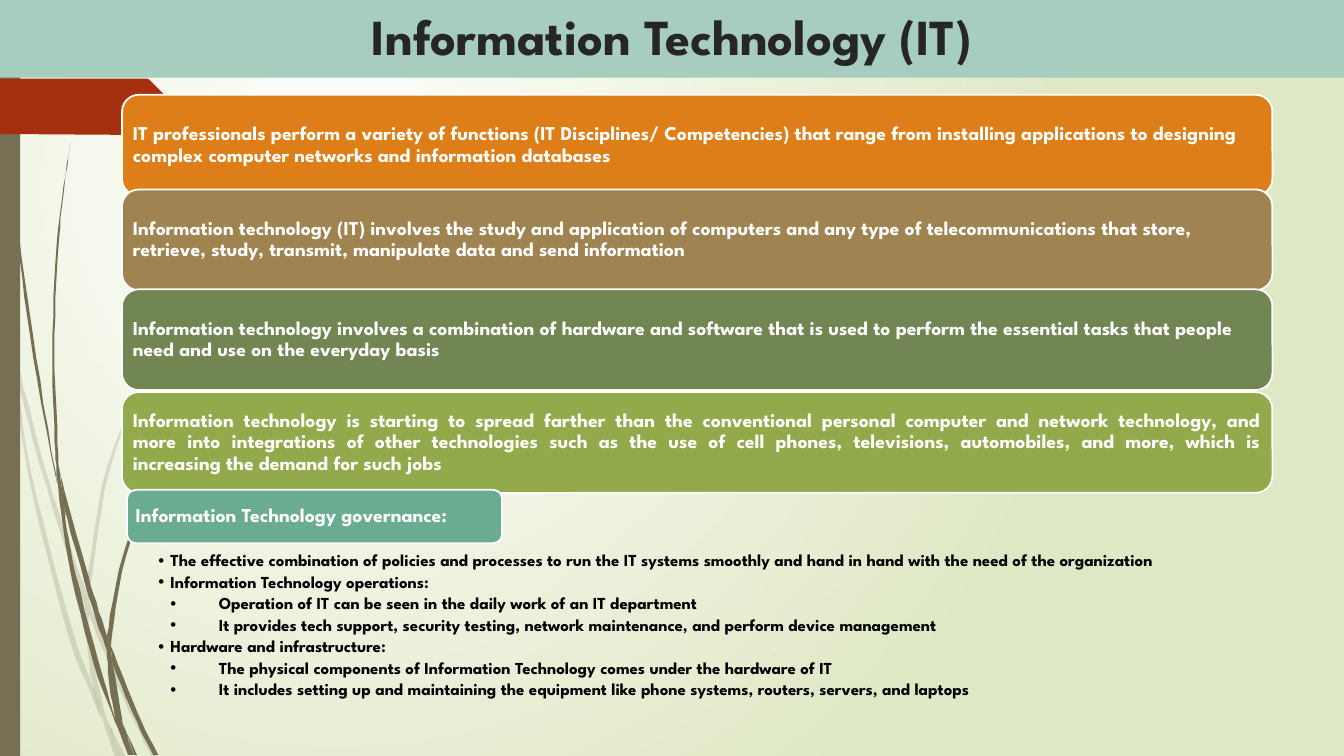
from pptx import Presentation
from pptx.dml.color import RGBColor
from pptx.enum.shapes import MSO_SHAPE
from pptx.enum.text import MSO_ANCHOR, PP_ALIGN
from pptx.oxml import parse_xml
from pptx.oxml.ns import nsdecls, qn
from pptx.util import Pt

PX = 9144
FONT = "League Spartan"
COLORS = {
    "white": "FFFFFF", "meadow": "DFE8C4", "stem": "766F54", "ribbon": "A53010",
    "banner": "A6CDBD", "title": "262626", "orange": "DE7E18", "brown": "9F8351",
    "moss": "728653", "lime": "92AA4C", "teal": "6AAC91", "black": "000000",
}
BARS = [
    (94, "orange", "IT professionals perform a variety of functions (IT Disciplines/ Competencies) that range "
     "from installing applications to designing complex computer networks and information databases"),
    (188, "brown", "Information technology (IT) involves the study and application of computers and any type of "
     "telecommunications that store, retrieve, study, transmit, manipulate data and send information"),
    (287, "moss", "Information technology involves a combination of hardware and software that is used to "
     "perform the essential tasks that people need and use on the everyday basis"),
    (389, "lime", "Information technology is starting to spread farther than the conventional personal computer "
     "and network technology, and\vmore into integrations of other technologies such as the use of cell phones, "
     "televisions, automobiles, and more, which is\vincreasing the demand for such jobs"),
]
BULLETS = [
    (1, "The effective combination of policies and processes to run the IT systems smoothly and hand in hand "
     "with the need of the organization"),
    (1, "Information Technology operations:"),
    (2, "Operation of IT can be seen in the daily work of an IT department"),
    (2, "It provides tech support, security testing, network maintenance, and perform device management"),
    (1, "Hardware and infrastructure:"),
    (2, "The physical components of Information Technology comes under the hardware of IT"),
    (2, "It includes setting up and maintaining the equipment like phone systems, routers, servers, and laptops"),
]
LEVEL_INDENTS = {1: (12, -12), 2: (60, -48)}
PALE_BLADES = [
    ([(0, 282), (9, 322), (11, 350)], [(0, 299), (10, 344)]),
    ([(14, 345), (36, 433), (62, 520), (85, 586)], [(17, 376), (36, 449), (58, 522), (84, 599)]),
    ([(88, 596), (127, 692), (155, 750)], [(88, 610), (123, 694), (150, 750)]),
    ([(105, 711), (124, 750)], [(105, 711), (119, 750)]),
    ([(11, 350), (17, 376), (31, 469), (70, 619), (93, 683), (101, 714)],
     [(11, 350), (28, 470), (65, 621), (92, 693), (101, 714)]),
    ([(84, 599), (87, 646), (93, 683), (105, 711)], [(88, 610), (91, 646), (105, 711)]),
    ([(312, 153), (268, 197), (228, 244), (158, 348), (107, 461), (85, 584)],
     [(312, 153), (268, 198), (229, 245), (160, 349), (110, 462), (88, 596)]),
    ([(101, 714), (114, 750)], [(101, 714), (119, 750)]),
    ([(85, 586), (84, 599)], [(88, 596), (88, 610)]),
    ([(93, 683), (99, 707), (119, 750)], [(96, 692), (105, 711), (119, 750)]),
]
DARK_BLADES = [
    ([(3, 0), (7, 110), (17, 233), (33, 355), (57, 481)], [(4, 0), (8, 109), (19, 232), (36, 355), (57, 481)]),
    ([(60, 472), (76, 531), (93, 590), (106, 631)], [(64, 505), (88, 592), (106, 645)]),
    ([(110, 641), (136, 706), (157, 749)], [(111, 656), (132, 708), (152, 749)]),
    ([(57, 477), (68, 557), (93, 659), (117, 722)], [(64, 505), (72, 556), (98, 657), (117, 722)]),
    ([(70, 141), (62, 193), (56, 245), (52, 349), (55, 449), (60, 472)],
     [(70, 141), (63, 193), (58, 245), (54, 349), (58, 453), (60, 472)]),
    ([(122, 719), (136, 749)], [(122, 719), (133, 749)]),
    ([(55, 449), (57, 477), (64, 505)], [(60, 472), (64, 505)]),
    ([(260, 344), (231, 373), (204, 405), (156, 474), (122, 551), (106, 631)],
     [(261, 344), (231, 374), (205, 406), (158, 476), (125, 552), (110, 641)]),
    ([(117, 722), (127, 749)], [(117, 722), (131, 749)]),
    ([(106, 645), (110, 691), (122, 719)], [(106, 645), (111, 656), (122, 719)]),
    ([(106, 631), (106, 645)], [(110, 641), (111, 656)]),
    ([(110, 691), (117, 722), (130, 749)], [(110, 691), (122, 719), (133, 749)]),
]
RIBBON = [(0, 78), (146, 78), (148, 79), (173, 104), (173, 108), (148, 133), (146, 134), (0, 133)]


def color(name):
    """Return the named colour."""
    return RGBColor.from_string(COLORS[name])


def paint(shape, fill, line=None):
    """Give a shape its fill, its outline and no shadow."""
    shape.shadow.inherit = False
    shape.fill.solid()
    shape.fill.fore_color.rgb = color(fill)
    if line:
        shape.line.color.rgb = color(line)
        shape.line.width = Pt(1.25)
    else:
        shape.line.fill.background()


def set_background(page):
    """Fill the page with a gradient glowing from its upper left quarter."""
    fill = page.background.fill
    fill.gradient()
    for stop, name in zip(fill.gradient_stops, ("white", "meadow")):
        stop.color.rgb = color(name)
    gradient = page.element.find(".//" + qn("a:gradFill"))
    glow = parse_xml(f'<a:path {nsdecls("a")} path="circle"><a:fillToRect l="50000" t="50000" '
                     'r="100000" b="100000"/></a:path>')
    gradient.replace(gradient.find(qn("a:lin")), glow)


def smooth_edge(points, steps=6):
    """Return a Catmull-Rom curve through the points."""
    padded = [points[0], *points, points[-1]]
    curve = [points[0]]
    for a, b, c, d in zip(padded, padded[1:], padded[2:], padded[3:]):
        for t in (step / steps for step in range(1, steps + 1)):
            curve.append(tuple(
                q + t * (r - p) / 2 + t * t * (2 * p - 5 * q + 4 * r - s) / 2
                + t ** 3 * (3 * q - p - 3 * r + s) / 2
                for p, q, r, s in zip(a, b, c, d)))
    return curve


def add_outline(page, points, fill):
    """Add a closed freeform through the points."""
    builder = page.shapes.build_freeform(*points[0], scale=PX)
    builder.add_line_segments(points[1:], close=True)
    shape = builder.convert_to_shape()
    paint(shape, fill)
    return shape


def add_blade(page, left, right, opacity=100):
    """Add a piece of grass between two curved edges."""
    shape = add_outline(page, smooth_edge(left) + smooth_edge(right)[::-1], "stem")
    if opacity < 100:
        tint = shape.element.spPr.find(qn("a:solidFill"))[0]
        tint.append(parse_xml(f'<a:alpha {nsdecls("a")} val="{opacity * 1000}"/>'))


def fill_frame(frame, text, margins):
    """Put wrapped text between the given margins."""
    frame.word_wrap = True
    frame.margin_left, frame.margin_top, frame.margin_right, frame.margin_bottom = (m * PX for m in margins)
    frame.text = text


def style_paragraph(para, size, name, align=PP_ALIGN.LEFT, spacing=0.9):
    """Format a paragraph and its runs."""
    para.alignment = align
    para.line_spacing = spacing
    for span in para.runs:
        span.font.name = FONT
        span.font.size = Pt(size)
        span.font.bold = True
        span.font.color.rgb = color(name)


def add_block(page, preset, place, fill, line=None):
    """Add a filled preset shape."""
    shape = page.shapes.add_shape(preset, *(length * PX for length in place))
    paint(shape, fill, line)
    shape.text_frame.vertical_anchor = MSO_ANCHOR.MIDDLE
    return shape


def add_bar(page, place, fill, text):
    """Add a rounded bar with white bold text."""
    frame = add_block(page, MSO_SHAPE.ROUNDED_RECTANGLE, place, fill, "white").text_frame
    fill_frame(frame, text, (6, 6, 6, 6))
    align = PP_ALIGN.JUSTIFY if "\v" in text else PP_ALIGN.LEFT
    style_paragraph(frame.paragraphs[0], 14, "white", align)


def add_title(page, text):
    """Add the banner with the title."""
    frame = add_block(page, MSO_SHAPE.RECTANGLE, (0, 0, 1333, 77), "banner").text_frame
    fill_frame(frame, text, (10, 3, 10, 9))
    style_paragraph(frame.paragraphs[0], 36, "title", PP_ALIGN.CENTER, 1.0)


def add_bullets(page, place, items):
    """Add the two-level bullet list."""
    frame = page.shapes.add_textbox(*(length * PX for length in place)).text_frame
    fill_frame(frame, "\n".join(text for _, text in items), (36, 2, 9, 2))
    for para, (level, _) in zip(frame.paragraphs, items):
        para.level = level
        style_paragraph(para, 12, "black")
        para.space_after = Pt(2.4)
        properties = para._p.get_or_add_pPr()
        for key, length in zip(("marL", "indent"), LEVEL_INDENTS[level]):
            properties.set(key, str(length * PX))
        for mark in ('buFont {} typeface="Arial"', 'buChar {} char="•"'):
            properties.append(parse_xml(f'<a:{mark.format(nsdecls("a"))}/>'))


def main():
    """Build the slide and save it."""
    deck = Presentation()
    deck.slide_width, deck.slide_height = 1333 * PX, 750 * PX
    page = deck.slides.add_slide(deck.slide_layouts[6])
    set_background(page)
    for blades, opacity in ((PALE_BLADES, 20), (DARK_BLADES, 100)):
        for left, right in blades:
            add_blade(page, left, right, opacity)
    add_block(page, MSO_SHAPE.RECTANGLE, (0, 0, 20, 750), "stem")
    add_outline(page, RIBBON, "ribbon")
    add_title(page, "Information Technology (IT)")
    for top, fill, text in BARS:
        add_bar(page, (121, top, 1141, 100), fill, text)
    add_bar(page, (126, 486, 372, 53), "teal", "Information Technology governance:")
    add_bullets(page, (121, 546, 1141, 159), BULLETS)
    deck.save("out.pptx")


if __name__ == "__main__":
    main()
